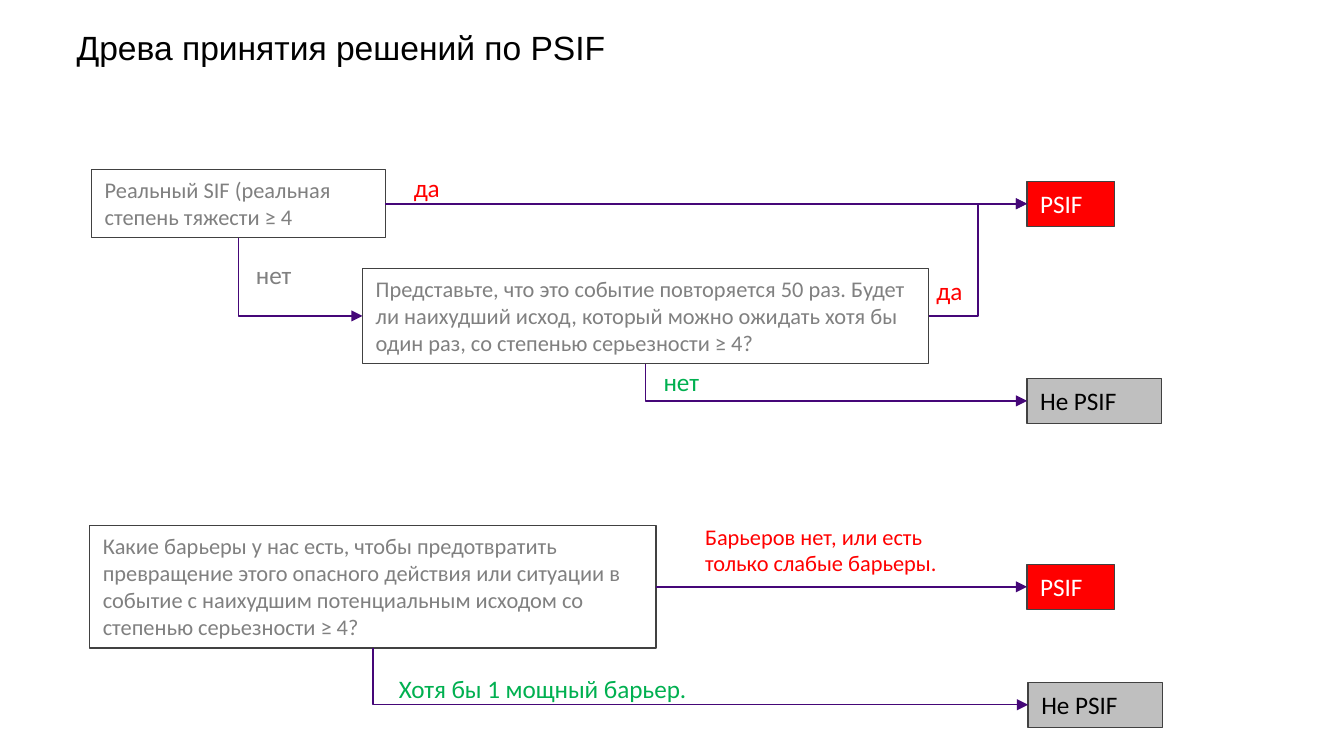
from lxml import etree
from pptx import Presentation
from pptx.dml.color import RGBColor
from pptx.enum import shapes, text
from pptx.oxml.ns import qn
from pptx.util import Pt

RED, GREEN, GREY, BLACK, WHITE = "FF0000", "00B050", "808080", "000000", "FFFFFF"
SILVER, OUTLINE, ARROW = "BFBFBF", "414141", "450778"
TOP, LEFT, BOTTOM, RIGHT = range(4)


def rgb(value):
    return RGBColor.from_string(value)


class DecisionTree:
    def __init__(self, slide):
        self.slide = slide
        self.font = "Calibri"
        self.line_width = Pt(0.75)

    def set_words(self, sp, words, size, color, font=None):
        tf = sp.text_frame
        tf.text = words
        tf.word_wrap = True
        tf.vertical_anchor = text.MSO_ANCHOR.TOP
        p = tf.paragraphs[0]
        p.alignment = text.PP_ALIGN.LEFT
        f = p.runs[0].font
        f.name, f.size = font or self.font, Pt(size)
        f.color.rgb = rgb(color)
        return tf

    def title(self, words, x, y, w, h):
        sp = self.slide.shapes.title
        sp.left, sp.top, sp.width, sp.height = Pt(x), Pt(y), Pt(w), Pt(h)
        tf = self.set_words(sp, words, 18, BLACK, "Arial")
        tf.margin_left = tf.margin_top = tf.margin_right = tf.margin_bottom = 0

    def box(self, words, x, y, w, h, size=12, color=GREY, fill=None):
        sp = self.slide.shapes.add_shape(
            shapes.MSO_SHAPE.RECTANGLE, Pt(x), Pt(y), Pt(w), Pt(h))
        sp.shadow.inherit = False
        if fill:
            sp.fill.solid()
            sp.fill.fore_color.rgb = rgb(fill)
        else:
            sp.fill.background()
        sp.line.color.rgb = rgb(OUTLINE)
        sp.line.width = self.line_width
        self.set_words(sp, words, size, color)
        return sp

    def psif(self, x, y):
        return self.box("PSIF", x, y, 47, 24, 13.5, WHITE, RED)

    def not_psif(self, x, y):
        return self.box("Не PSIF", x, y, 72, 24, 13.5, BLACK, SILVER)

    def label(self, words, x, y, w, color, h=24, size=13.5):
        sp = self.slide.shapes.add_textbox(Pt(x), Pt(y), Pt(w), Pt(h))
        self.set_words(sp, words, size, color)

    def arrow(self, start, end, kind=shapes.MSO_CONNECTOR.STRAIGHT, side=RIGHT):
        c = self.slide.shapes.add_connector(kind, 0, 0, 0, 0)
        c.begin_connect(start, side)
        c.end_connect(end, LEFT)
        c.line.color.rgb = rgb(ARROW)
        c.line.width = self.line_width
        pr = c._element.spPr
        etree.SubElement(pr.find(qn("a:ln")), qn("a:tailEnd"), type="triangle")
        etree.SubElement(pr, qn("a:effectLst"))
        return c

    def elbow(self, start, end):
        return self.arrow(start, end, shapes.MSO_CONNECTOR.ELBOW)

    def corner(self, start, end):
        """Arrow that goes down from start, then right into end."""
        c = self.arrow(start, end, shapes.MSO_CONNECTOR.ELBOW, BOTTOM)
        x, y, w, h = c.left, c.top, c.width, c.height
        # A quarter turn swaps width and height around the same centre.
        c.left, c.top = x + (w - h) // 2, y + (h - w) // 2
        c.width, c.height = h, w
        pr = c._element.spPr
        pr.find(qn("a:prstGeom")).set("prst", "bentConnector2")
        xfrm = pr.find(qn("a:xfrm"))
        xfrm.set("rot", "16200000")
        xfrm.set("flipH", "1")


def main():
    prs = Presentation()
    prs.slide_width, prs.slide_height = Pt(720), Pt(405)
    tree = DecisionTree(prs.slides.add_slide(prs.slide_layouts[5]))
    tree.title("Древа принятия решений по PSIF", 41, 14.5, 620.5, 33)

    # Tree by severity
    actual = tree.box("Реальный SIF (реальная степень тяжести ≥ 4", 49, 91, 157.5, 36.4)
    repeated = tree.box(
        "Представьте, что это событие повторяется 50 раз. Будет ли наихудший исход, "
        "который можно ожидать хотя бы один раз, со степенью серьезности ≥ 4?",
        194.2, 143.8, 303.3, 51)
    psif = tree.psif(550.2, 97.2)
    not_psif = tree.not_psif(550.2, 202.8)
    tree.arrow(actual, psif)
    tree.corner(actual, repeated)
    tree.elbow(repeated, psif)
    tree.corner(repeated, not_psif)
    tree.label("да", 214.6, 88.7, 31, RED)
    tree.label("да", 494.6, 144.2, 31, RED)
    tree.label("нет", 348.4, 192.5, 42, GREEN)
    tree.label("нет", 130, 135.6, 40, GREY)

    # Tree by barriers
    barriers = tree.box(
        "Какие барьеры у нас есть, чтобы предотвратить превращение этого опасного "
        "действия или ситуации в событие с наихудшим потенциальным исходом со "
        "степенью серьезности ≥ 4?",
        48, 281.6, 303.6, 65.6)
    psif = tree.psif(550.2, 302.4)
    not_psif = tree.not_psif(550.8, 365.6)
    tree.arrow(barriers, psif)
    tree.corner(barriers, not_psif)
    tree.label("Барьеров нет, или есть только слабые барьеры.",
               370.6, 276.5, 140, RED, 36.4, 12)
    tree.label("Хотя бы 1 мощный барьер.", 206.6, 357.4, 194, GREEN)

    prs.save("out.pptx")


if __name__ == "__main__":
    main()
